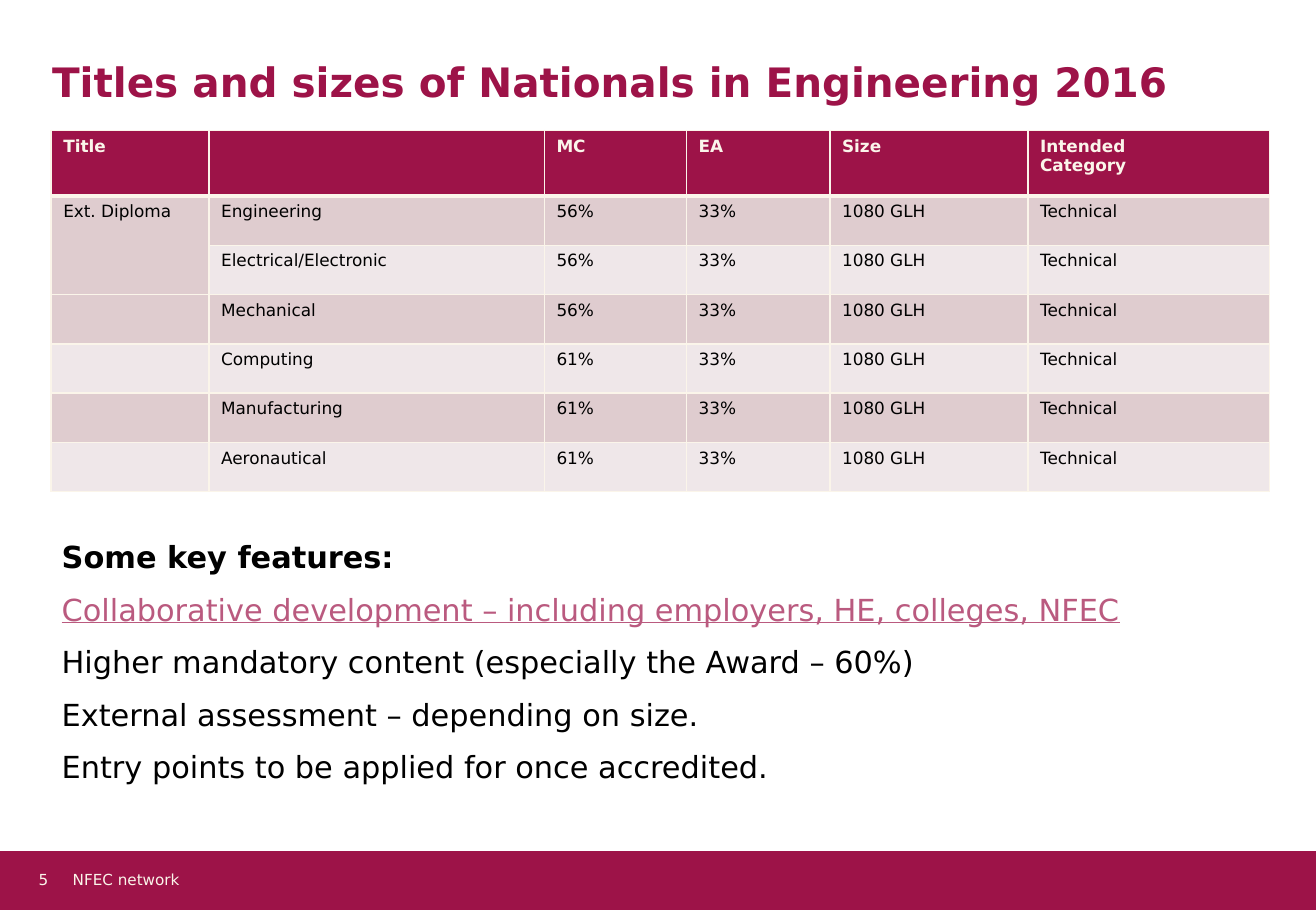
from dataclasses import dataclass

from lxml.etree import SubElement
from pptx import Presentation
from pptx.dml.color import RGBColor
from pptx.enum.shapes import MSO_CONNECTOR, MSO_SHAPE
from pptx.oxml.ns import qn
from pptx.util import Cm, Pt


@dataclass(frozen=True)
class Theme:
    font: str = "DejaVu Sans"
    claret: str = "9D1348"
    cream: str = "FBF5EA"
    white: str = "FFFFFF"
    black: str = "000000"
    link: str = "BA5A7F"
    bands: tuple = ("DFCCCF", "EFE7E9")
    title_size: float = 24
    body_size: float = 18
    table_size: float = 10
    footer_size: float = 9
    body_gap: float = 9.5


theme = Theme()


def add_span(para, text, size, color, bold=False, underline=False):
    span = para.add_run()
    span.text = text
    span.font.name = theme.font
    span.font.size = Pt(size)
    span.font.bold = bold
    span.font.underline = underline
    span.font.color.rgb = RGBColor.from_string(color)


def add_frame(left, top, width, height, inset_x=0, inset_top=0):
    """Add a wrapping text box, measured in centimetres, and return its text frame."""
    frame = page.shapes.add_textbox(Cm(left), Cm(top), Cm(width), Cm(height)).text_frame
    frame.word_wrap = True
    frame.margin_left = frame.margin_right = Cm(inset_x)
    frame.margin_top, frame.margin_bottom = Cm(inset_top), 0
    return frame


deck = Presentation()
deck.slide_width, deck.slide_height = Cm(27.51), Cm(19.05)
page = deck.slides.add_slide(deck.slide_layouts[6])

# Footer band
footer_top = Cm(17.78)
band = page.shapes.add_shape(MSO_SHAPE.RECTANGLE, 0, footer_top, deck.slide_width, Cm(1.25))
band.shadow.inherit = False
band.fill.solid()
band.fill.fore_color.rgb = RGBColor.from_string(theme.claret)
band.line.fill.background()

rule = page.shapes.add_connector(
    MSO_CONNECTOR.STRAIGHT, 0, footer_top, deck.slide_width, footer_top)
rule.line.color.rgb = RGBColor.from_string(theme.white)
rule.line.width = Pt(0.5)
SubElement(rule.element.spPr, qn("a:effectLst"))

for left, width, text in [(1.52, 14.99, "NFEC network"), (0.81, 0.7, "5")]:
    footer = add_frame(left, 18.19, width, 0.51)
    add_span(footer.paragraphs[0], text, theme.footer_size, theme.cream)

# Title
title = add_frame(1.09, 1.09, 25.3, 1.83, inset_top=0.1)
add_span(title.paragraphs[0], "Titles and sizes of Nationals in Engineering 2016",
         theme.title_size, theme.claret, bold=True)

# Table of qualifications
headings = ["Title", "", "MC", "EA", "Size", "Intended\nCategory"]
subjects = [("Engineering", "56%"), ("Electrical/Electronic", "56%"), ("Mechanical", "56%"),
            ("Computing", "61%"), ("Manufacturing", "61%"), ("Aeronautical", "61%")]
rows = [headings] + [["", subject, mandatory, "33%", "1080 GLH", "Technical"]
                     for subject, mandatory in subjects]
rows[1][0] = "Ext. Diploma"
column_widths = [3.3, 7.01, 2.97, 3.0, 4.14, 5.05]
header_height, row_height = 1.37, 1.03

table = page.shapes.add_table(
    len(rows), len(headings), Cm(1.07), Cm(2.73), Cm(sum(column_widths)),
    Cm(header_height + row_height * len(subjects))).table
for column, width in zip(table.columns, column_widths):
    column.width = Cm(width)

for row_index, row in enumerate(rows):
    is_header = row_index == 0
    table.rows[row_index].height = Cm(header_height if is_header else row_height)
    fill = theme.claret if is_header else theme.bands[(row_index - 1) % 2]
    border_widths = {"a:lnL": 1, "a:lnR": 1,
                     "a:lnT": 3 if row_index == 1 else 1,
                     "a:lnB": 3 if is_header else 1}
    for column_index, text in enumerate(row):
        cell = table.cell(row_index, column_index)
        properties = cell._tc.get_or_add_tcPr()
        for tag, points in border_widths.items():
            border = SubElement(properties, qn(tag), w=str(Pt(points)))
            SubElement(SubElement(border, qn("a:solidFill")), qn("a:srgbClr"), val=theme.cream)
        cell.fill.solid()
        cell.fill.fore_color.rgb = RGBColor.from_string(fill)
        for line_index, line in enumerate(text.split("\n")):
            paragraphs = cell.text_frame
            para = paragraphs.add_paragraph() if line_index else paragraphs.paragraphs[0]
            para.font.size = Pt(theme.table_size)
            if line:
                add_span(para, line, theme.table_size,
                         theme.cream if is_header else theme.black, bold=is_header)
table.cell(1, 0).merge(table.cell(2, 0))

# Key features
features = [
    ("Some key features:", theme.black, True, False),
    ("Collaborative development – including employers, HE, colleges, NFEC",
     theme.link, False, True),
    ("Higher mandatory content (especially the Award – 60%)", theme.black, False, False),
    ("External assessment – depending on size.", theme.black, False, False),
    ("Entry points to be applied for once accredited.", theme.black, False, False),
]
box = add_frame(1.04, 11.13, 25.4, 6.5, inset_x=0.25, inset_top=0.13)
for index, (text, color, bold, underline) in enumerate(features):
    para = box.add_paragraph() if index else box.paragraphs[0]
    if index:
        para.space_before = Pt(theme.body_gap)
    add_span(para, text, theme.body_size, color, bold, underline)

deck.save("out.pptx")
